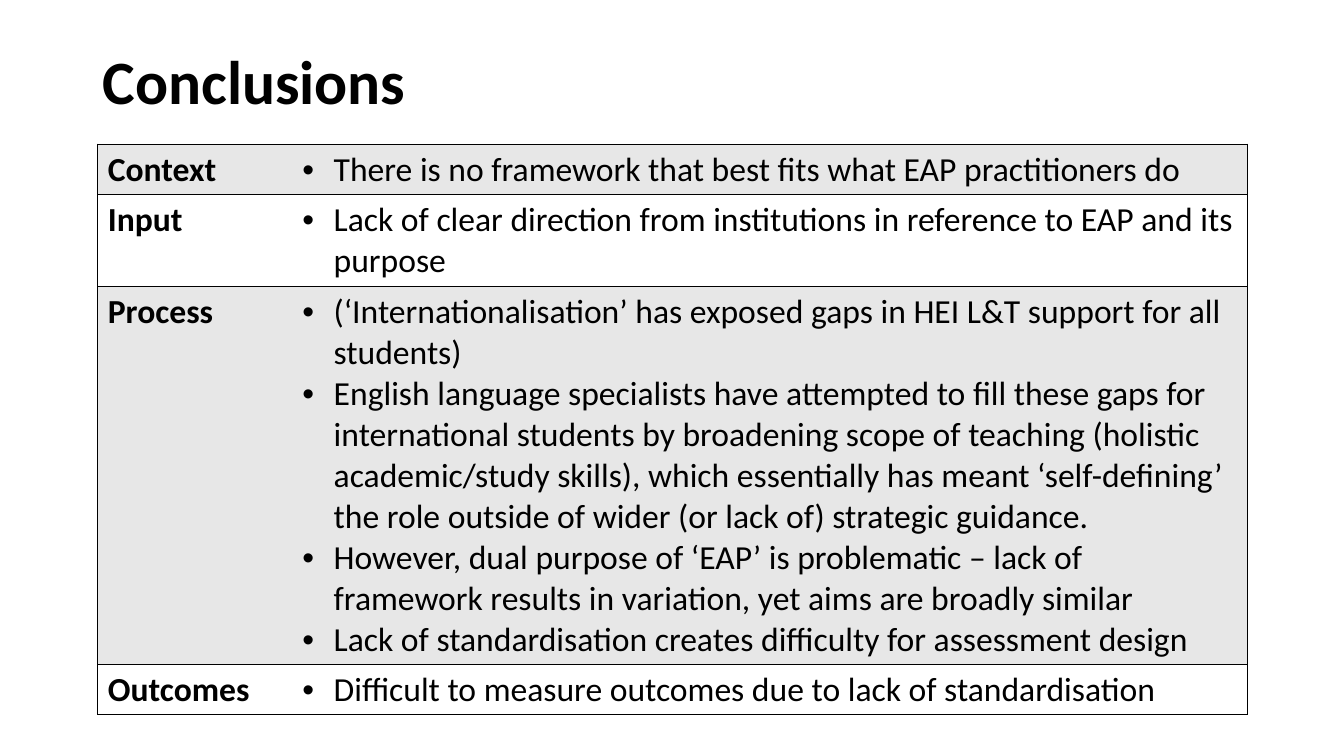
import pptx
import pptx.util
import pptx.dml.color
import pptx.enum.text
import pptx.oxml
import pptx.oxml.ns
from dataclasses import dataclass

Inches = pptx.util.Inches
Pt = pptx.util.Pt


@dataclass
class Theme:
    font: str = "Calibri"
    ink: str = "000000"
    bands: tuple = ("E7E7E7", "FFFFFF")
    title: int = 44
    body: int = 24


theme = Theme()


def write(para, text, size, bold):
    run = para.add_run()
    run.text = text
    run.font.name = theme.font
    run.font.size = Pt(size)
    run.font.bold = bold
    run.font.color.rgb = pptx.dml.color.RGBColor.from_string(theme.ink)


def style(cell, band, open_side):
    cell.fill.solid()
    cell.fill.fore_color.rgb = pptx.dml.color.RGBColor.from_string(band)
    props = cell._tc.get_or_add_tcPr()
    space = pptx.oxml.ns.nsdecls("a")
    for place, side in enumerate("LRTB"):
        paint = f'<a:solidFill><a:srgbClr val="{theme.ink}"/></a:solidFill>'
        if side == open_side:
            paint = "<a:noFill/>"
        line = f'<a:ln{side} {space} w="{Pt(1)}">{paint}</a:ln{side}>'
        props.insert(place, pptx.oxml.parse_xml(line))


deck = pptx.Presentation()
deck.slide_width = Inches(13.33)
deck.slide_height = Inches(7.5)
slide = deck.slides.add_slide(deck.slide_layouts[6])

# Title
title = slide.shapes.add_textbox(Inches(0.92), Inches(0.11), Inches(9.85), Inches(1.45))
frame = title.text_frame
frame.word_wrap = True
frame.vertical_anchor = pptx.enum.text.MSO_ANCHOR.MIDDLE
frame.paragraphs[0].line_spacing = 0.9
write(frame.paragraphs[0], "Conclusions", theme.title, True)

# Findings: label, row height, points
rows = [
    ("Context", 0.5, ["There is no framework that best fits what EAP practitioners do"]),
    ("Input", 0.91, [
        "Lack of clear direction from institutions in reference to EAP and its purpose",
    ]),
    ("Process", 3.75, [
        "(‘Internationalisation’ has exposed gaps in HEI L&T support for all students)",
        "English language specialists have attempted to fill these gaps for "
        "international students by broadening scope of teaching (holistic "
        "academic/study skills), which essentially has meant ‘self-defining’ "
        "the role outside of wider (or lack of) strategic guidance.",
        "However, dual purpose of ‘EAP’ is problematic – lack of framework "
        "results in variation, yet aims are broadly similar",
        "Lack of standardisation creates difficulty for assessment design",
    ]),
    ("Outcomes", 0.5, ["Difficult to measure outcomes due to lack of standardisation"]),
]

# Table
height = sum(row[1] for row in rows)
table = slide.shapes.add_table(
    len(rows), 2, Inches(0.97), Inches(1.43), Inches(11.4), Inches(height)
).table
table.first_row = False
table.horz_banding = False
for column, width in zip(table.columns, (1.93, 9.47)):
    column.width = Inches(width)

for index, (label, tall, points) in enumerate(rows):
    table.rows[index].height = Inches(tall)
    name, notes = table.cell(index, 0), table.cell(index, 1)
    band = theme.bands[index % 2]
    style(name, band, "R")
    style(notes, band, "L")
    write(name.text_frame.paragraphs[0], label, theme.body, True)

    # Bulleted points
    for order, point in enumerate(points):
        body = notes.text_frame
        para = body.add_paragraph() if order else body.paragraphs[0]
        props = para._p.get_or_add_pPr()
        props.set("marL", str(Inches(0.31)))
        props.set("indent", str(-Inches(0.31)))
        space = pptx.oxml.ns.nsdecls("a")
        props.append(pptx.oxml.parse_xml(f'<a:buFont {space} typeface="Arial"/>'))
        props.append(pptx.oxml.parse_xml(f'<a:buChar {space} char="•"/>'))
        write(para, point, theme.body, False)

deck.save("out.pptx")
